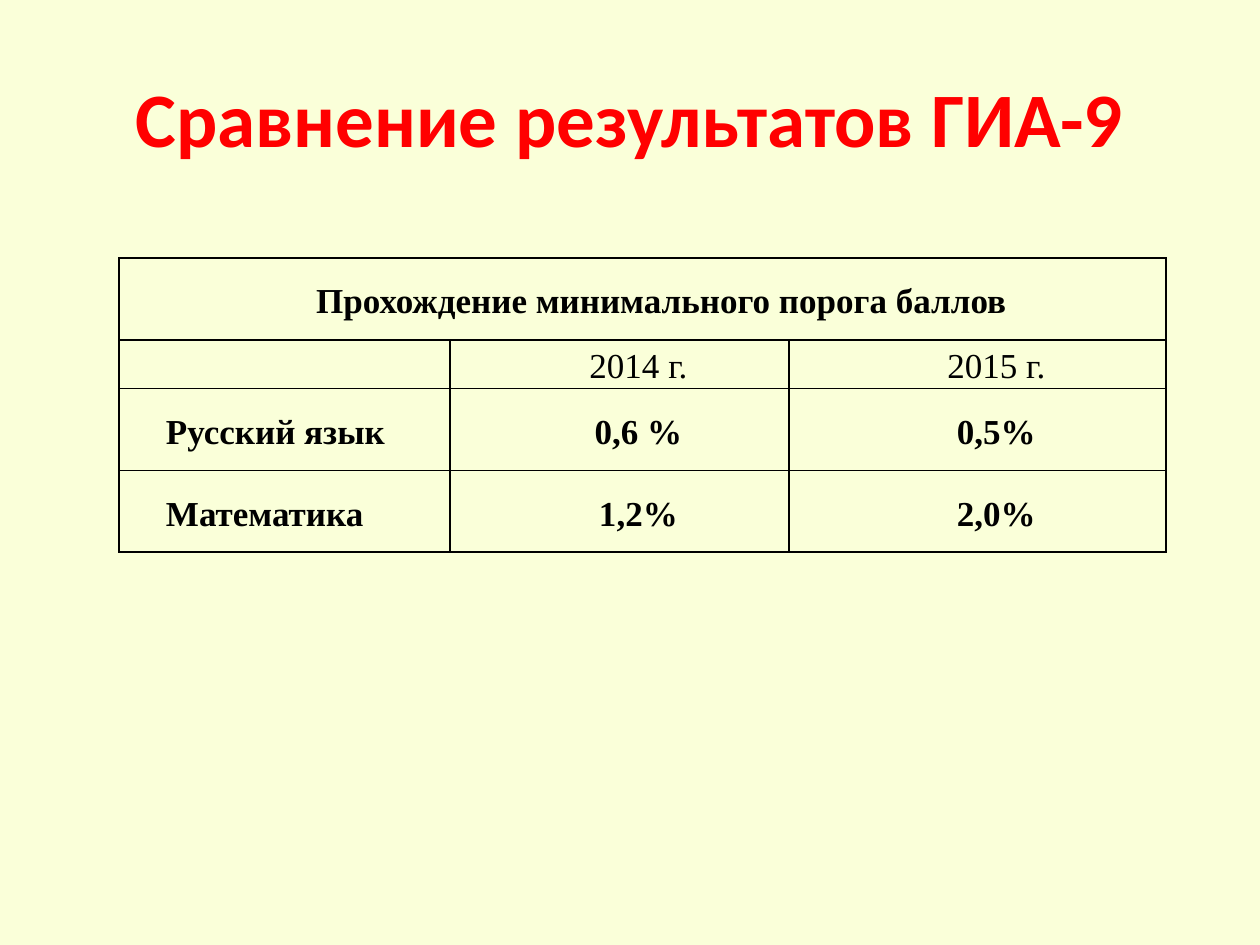
from lxml.etree import SubElement
from pptx import Presentation
from pptx.dml.color import RGBColor
from pptx.enum.text import MSO_ANCHOR, PP_ALIGN
from pptx.oxml.ns import qn
from pptx.util import Pt

PX = 914400 // 126
INK = "000000"
COLUMNS = [331, 339, 377]
ROWS = [82, 28, 82, 82]
RESULTS = [
    ["Прохождение минимального порога баллов", "", ""],
    ["", "2014 г.", "2015 г."],
    ["Русский язык", "0,6 %", "0,5%"],
    ["Математика", "1,2%", "2,0%"],
]


def px(n):
    """Turn pixels into EMU."""
    return n * PX


def color(value):
    """Turn a hex string into a colour."""
    return RGBColor.from_string(value)


def write(tf, text, size=20, font="Times New Roman", ink=INK, bold=True,
          align=PP_ALIGN.CENTER, indent=0, spacing=1.0):
    """Write one formatted paragraph into a text frame."""
    p = tf.paragraphs[0]
    p.alignment = align
    p.line_spacing = spacing
    p._p.get_or_add_pPr().set("indent", str(px(indent)))
    r = p.add_run()
    r.text = text
    r.font.size = Pt(size)
    r.font.name = font
    r.font.bold = bold
    r.font.color.rgb = color(ink)


def add_title(slide, text):
    """Add the centred slide title."""
    sp = slide.shapes.add_textbox(px(63), px(38), px(1134), px(158))
    tf = sp.text_frame
    tf.word_wrap = True
    tf.vertical_anchor = MSO_ANCHOR.MIDDLE
    write(tf, text, size=44, font="Calibri", ink="FF0000")


def style_cell(cell):
    """Give a cell thin borders, tight margins and no fill."""
    cell.vertical_anchor = MSO_ANCHOR.MIDDLE
    cell.margin_left = cell.margin_right = px(9)
    cell.margin_top = cell.margin_bottom = 0
    tcPr = cell._tc.get_or_add_tcPr()
    for side in ("a:lnL", "a:lnR", "a:lnT", "a:lnB"):
        ln = SubElement(tcPr, qn(side), w=str(Pt(1)))
        fill = SubElement(ln, qn("a:solidFill"))
        SubElement(fill, qn("a:srgbClr"), val=INK)
    cell.fill.background()


def add_results(slide):
    """Add the table of results by subject and year."""
    frame = slide.shapes.add_table(len(ROWS), len(COLUMNS), px(119), px(258),
                                   px(sum(COLUMNS)), px(sum(ROWS)))
    table = frame.table
    table.first_row = table.horz_banding = False
    for column, width in zip(table.columns, COLUMNS):
        column.width = px(width)
    for i, (row, height) in enumerate(zip(table.rows, ROWS)):
        row.height = px(height)
        for j, text in enumerate(RESULTS[i]):
            cell = table.cell(i, j)
            style_cell(cell)
            if text:
                subject = i > 1 and j == 0
                write(cell.text_frame, text, bold=i != 1, indent=38, spacing=1.15,
                      align=PP_ALIGN.JUSTIFY if subject else PP_ALIGN.CENTER)
    table.cell(0, 0).merge(table.cell(0, len(COLUMNS) - 1))


def main():
    """Build and save the slide."""
    prs = Presentation()
    prs.slide_width, prs.slide_height = px(1260), px(945)
    slide = prs.slides.add_slide(prs.slide_layouts[6])
    slide.background.fill.solid()
    slide.background.fill.fore_color.rgb = color("FAFFD9")
    add_title(slide, "Сравнение результатов ГИА-9")
    add_results(slide)
    prs.save("out.pptx")


if __name__ == "__main__":
    main()
